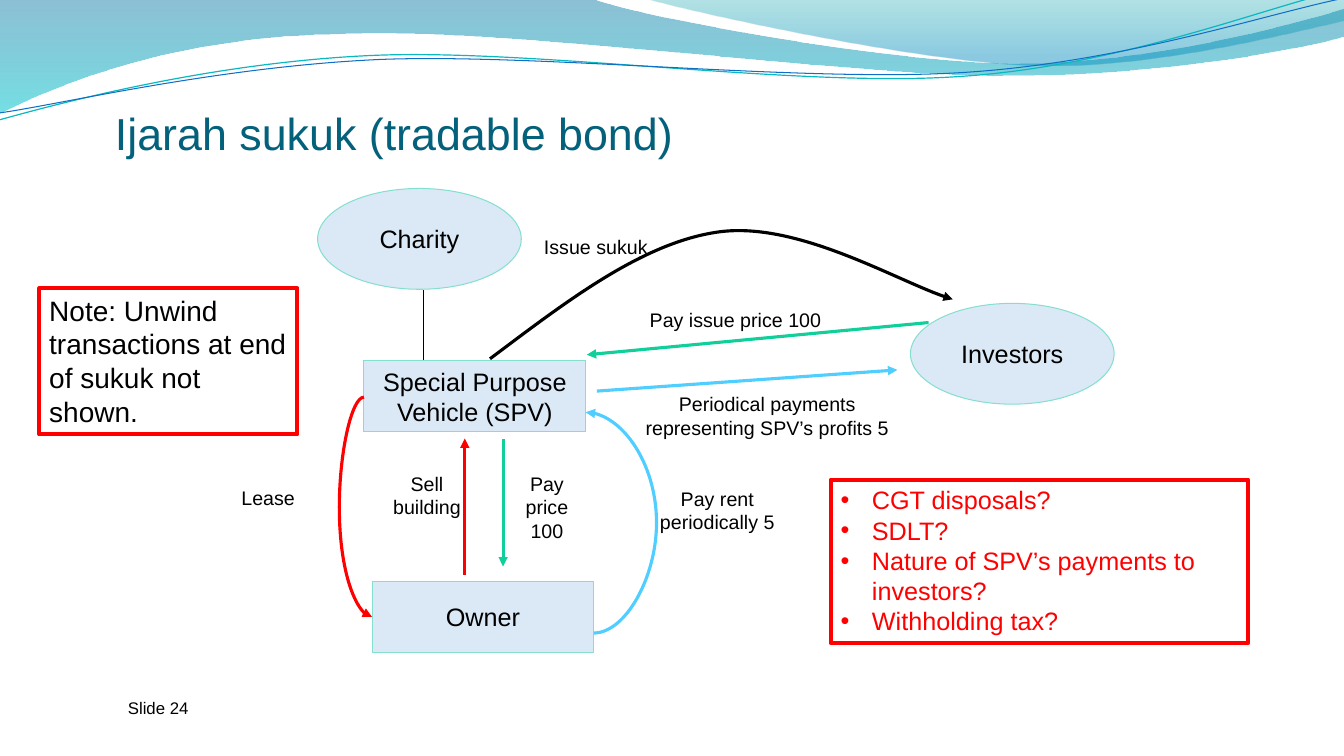
"""Build the Ijarah sukuk slide: cash flows between the SPV, owner, investors and charity."""
from lxml import etree
from pptx import Presentation
from pptx.dml.color import RGBColor
from pptx.enum.shapes import MSO_CONNECTOR, MSO_SHAPE
from pptx.enum.text import MSO_ANCHOR, MSO_AUTO_SIZE, PP_ALIGN
from pptx.oxml.ns import qn
from pptx.util import Pt

PX = 9144
BLACK, RED, GREEN, SKY = "000000", "FF0000", "10CF9B", "4FCEFF"
rgb = RGBColor.from_string


def stroke(outlined, color, width, arrow=False):
    outlined.line.color.rgb = rgb(color)
    outlined.line.width = Pt(width)
    properties = outlined._element.spPr
    if arrow:
        etree.SubElement(properties.find(qn("a:ln")), qn("a:tailEnd"), type="triangle")
    if properties.find(qn("a:effectLst")) is None:
        etree.SubElement(properties, qn("a:effectLst"))


def write(frame, lines, size, color=BLACK, align=PP_ALIGN.LEFT):
    for number, line in enumerate(lines):
        paragraph = frame.add_paragraph() if number else frame.paragraphs[0]
        paragraph.alignment = align
        run = paragraph.add_run()
        run.text = line
        run.font.name = "Arial"
        run.font.size = Pt(size)
        run.font.color.rgb = rgb(color)


deck = Presentation()
deck.slide_width, deck.slide_height = 1333 * PX, 750 * PX
slide = deck.slides.add_slide(deck.slide_layouts[5])
shapes = slide.shapes

broad_wave = [
    (0, 0), (587, -1), (634, 17, 885, 63, 1011, 63), (1138, 63, 1278, 26, 1333, 9),
    (1335, 36), (1311, 44, 1160, 76, 994, 75), (829, 75, 509, 28, 343, 34),
    (172, 36, 61, 83, -1, 113), (0, 0),
]
right_wave = [
    (639, -1), (679, 11, 909, 62, 1025, 65), (1141, 69, 1282, 32, 1333, 21),
    (1333, 0), (639, -1),
]
teal_ripple = [
    (-1, 119), (64, 101, 211, 62, 369, 55), (527, 48, 790, 87, 950, 76),
    (1110, 66, 1252, 8, 1331, -10),
]
blue_ripple = [
    (0, 112), (63, 103, 218, 66, 378, 59), (537, 53, 796, 82, 955, 72),
    (1115, 62, 1255, 14, 1334, -2),
]
issue_flow = [(486, 356), (562, 299, 638, 240, 714, 230), (791, 220, 897, 283, 945, 297)]

curves = [
    (broad_wave, [(0, "0074A1", 45), (1, "00C6CF", 55)], None),
    (right_wave, [(0, "00A1A9", 30), (0.8, "008BBF", 45)], None),
    (teal_ripple, None, ("0AB8BF", 0.85)),
    (blue_ripple, None, ("0F6FC6", 0.75)),
    (issue_flow, None, (BLACK, 2.25, True)),
]
for (start, *segments), gradient, pen in curves:
    point_groups = [list(zip(segment[::2], segment[1::2])) for segment in segments]
    builder = shapes.build_freeform(*start, scale=PX)
    builder.add_line_segments(sum(point_groups, []), close=bool(gradient))
    curve = builder.convert_to_shape()
    curve.shadow.inherit = False
    outline = curve._element.xpath(".//a:path")[0]
    steps = iter(outline.findall(qn("a:lnTo")))
    for group in point_groups:
        parts = [next(steps) for _ in group]
        if len(parts) == 3:
            bend = etree.Element(qn("a:cubicBezTo"))
            parts[0].addprevious(bend)
            for part in parts:
                bend.append(part[0])
                outline.remove(part)
    if gradient:
        curve.fill.gradient()
        curve.fill.gradient_angle = 270
        for stop, (position, color, opacity) in zip(curve.fill.gradient_stops, gradient):
            stop.position = position
            stop.color.rgb = rgb(color)
        for tint, (_, _, opacity) in zip(curve._element.xpath(".//a:gs/a:srgbClr"), gradient):
            etree.SubElement(tint, qn("a:alpha"), val=str(opacity * 1000))
        curve.line.fill.background()
    else:
        curve.fill.background()
        stroke(curve, *pen)

title = shapes.title
shapes._spTree.append(title._element)
title.left, title.top, title.width, title.height = [n * PX for n in (114, 100, 890, 58)]
heading = title.text_frame
heading.auto_size = MSO_AUTO_SIZE.NONE
heading.vertical_anchor = MSO_ANCHOR.BOTTOM
heading.margin_left = heading.margin_right = heading.margin_bottom = 0
heading.margin_top = 5 * PX
write(heading, ["Ijarah sukuk (tradable bond)"], 32, "04617B")

parties = [
    (MSO_SHAPE.RECTANGLE, (361, 358, 220, 70), ["Special Purpose", "Vehicle (SPV)"]),
    (MSO_SHAPE.RECTANGLE, (369, 577, 220, 70), ["Owner"]),
    (MSO_SHAPE.OVAL, (903, 301, 202, 100), ["Investors"]),
    (MSO_SHAPE.OVAL, (315, 187, 202, 100), ["Charity"]),
]
for outline, place, name in parties:
    party = shapes.add_shape(outline, *[n * PX for n in place])
    party.shadow.inherit = False
    party.fill.solid()
    party.fill.fore_color.rgb = rgb("0F6FC6")
    tint = party._element.spPr.xpath("./a:solidFill/a:srgbClr")[0]
    etree.SubElement(tint, qn("a:alpha"), val="15000")
    stroke(party, "85DFD0", 0.75)
    frame = party.text_frame
    frame.word_wrap = False
    frame.vertical_anchor = MSO_ANCHOR.MIDDLE
    frame.margin_left = frame.margin_right = 7 * PX
    frame.margin_top = frame.margin_bottom = 0
    write(frame, name, 18, align=PP_ALIGN.CENTER)

flows = [
    ((461, 570, 461, 435), RED, 2.25, None),
    ((499, 436, 499, 562), GREEN, 2.25, None),
    ((592, 388, 890, 367), SKY, 2.25, None),
    ((921, 320, 582, 352), GREEN, 2.25, None),
    ((420, 288, 420, 357), BLACK, 0.75, None),
    ((589, 628, 581, 409), SKY, 2.25, -778700),
    ((361, 394, 369, 612), RED, 2.25, -306400),
]
for ends, color, width, bulge in flows:
    route = MSO_CONNECTOR.CURVE if bulge else MSO_CONNECTOR.STRAIGHT
    flow = shapes.add_connector(route, *[n * PX for n in ends])
    stroke(flow, color, width, arrow=color != BLACK)
    if bulge:
        guides = flow._element.xpath(".//a:avLst")[0]
        etree.SubElement(guides, qn("a:gd"), name="adj1", fmla=f"val {bulge}")

labels = [
    ((374, 463, 99, 57), "Sell building"),
    ((496, 463, 93, 81), "Pay price 100"),
    ((640, 478, 143, 57), "Pay rent periodically 5"),
    ((592, 301, 275, 33), "Pay issue price 100"),
    ((507, 228, 168, 34), "Issue sukuk"),
    ((619, 384, 284, 57), "Periodical payments representing SPV’s profits 5"),
    ((182, 477, 168, 33), "Lease"),
]
questions = ["CGT disposals?", "SDLT?", "Nature of SPV’s payments to investors?", "Withholding tax?"]
note = ["Note: Unwind transactions at end of sukuk not shown."]
captions = [(place, [label], 14, BLACK, PP_ALIGN.CENTER, False) for place, label in labels]
captions += [
    ((117, 687, 233, 40), ["Slide 24"], 12, BLACK, PP_ALIGN.LEFT, False),
    ((39, 286, 256, 145), note, 20, BLACK, PP_ALIGN.LEFT, True),
    ((824, 476, 414, 162), questions, 18, RED, PP_ALIGN.LEFT, True),
]
for place, lines, size, color, align, framed in captions:
    caption = shapes.add_textbox(*[n * PX for n in place])
    caption.text_frame.word_wrap = True
    write(caption.text_frame, lines, size, color, align)
    if framed:
        stroke(caption, RED, 3)
    if lines is questions:
        for question in caption.text_frame.paragraphs:
            layout = question._p.get_or_add_pPr()
            layout.set("marL", str(31 * PX))
            layout.set("indent", str(-31 * PX))
            etree.SubElement(layout, qn("a:buFont"), typeface="Arial")
            etree.SubElement(layout, qn("a:buChar"), char="•")

deck.save("out.pptx")
